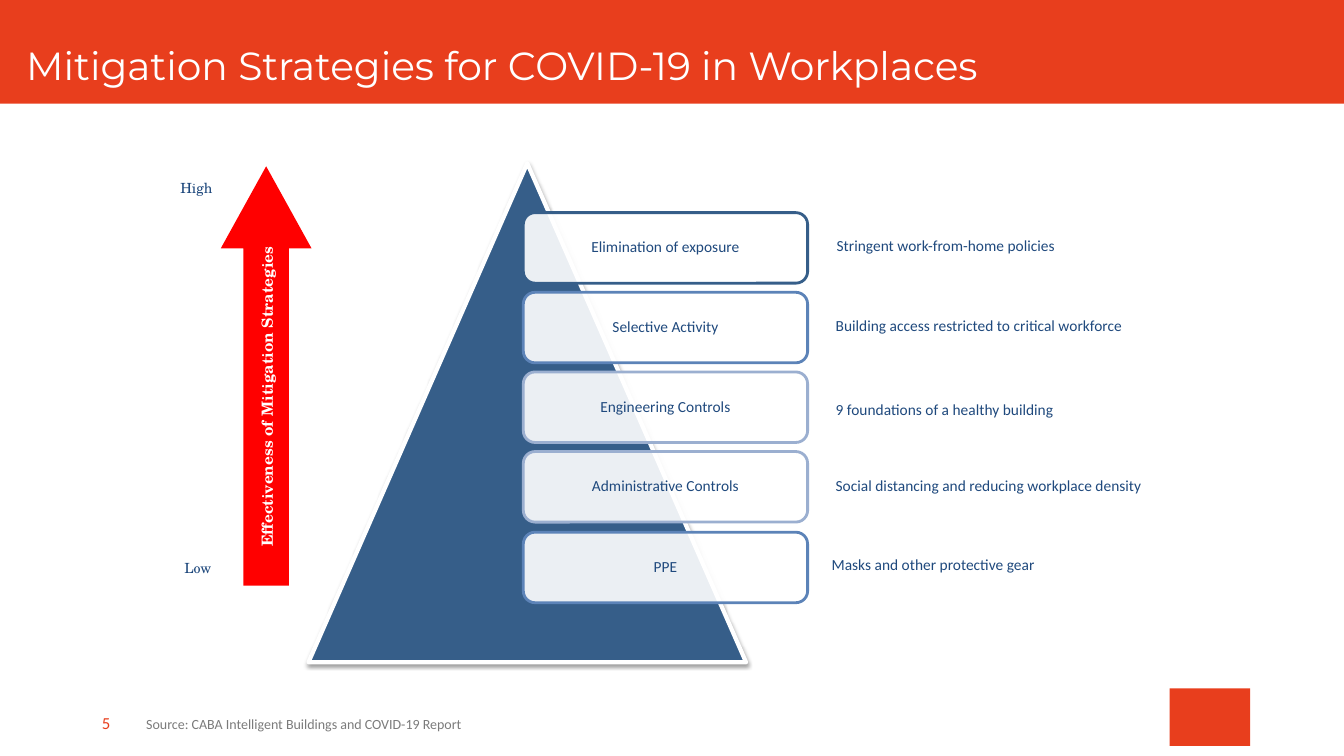
from dataclasses import dataclass
from typing import NamedTuple

from lxml import etree
from pptx import Presentation
from pptx import util as u
from pptx.dml import color
from pptx.enum import shapes, text
from pptx.oxml import ns

EMU_PER_PX = 9144


@dataclass(frozen=True)
class Theme:
    accent: str = "E83E1D"
    navy: str = "365E89"
    blue: str = "5C83B8"
    pale: str = "9BAFD0"
    ink: str = "1F497D"
    grey: str = "7B7B7B"
    red: str = "FF0000"
    white: str = "FFFFFF"
    title_font: str = "Montserrat"
    body_font: str = "Calibri"
    scale_font: str = "TeX Gyre Schola"
    title_size: int = 28
    number_size: int = 12
    body_size: int = 11
    small_size: int = 10


THEME = Theme()


class Frame(NamedTuple):
    left: int
    top: int
    width: int
    height: int


class Strategy(NamedTuple):
    name: str
    outline: str
    measure: str
    measure_left: int
    measure_top: int


class Label(NamedTuple):
    words: str
    frame: Frame
    style: dict


STRATEGIES = [
    Strategy("Elimination of exposure", THEME.navy, "Stringent work-from-home policies", 820, 229),
    Strategy("Selective Activity", THEME.blue, "Building access restricted to critical workforce", 819, 309),
    Strategy("Engineering Controls", THEME.pale, "9 foundations of a healthy building", 819, 392),
    Strategy("Administrative Controls", THEME.pale, "Social distancing and reducing workplace density", 819, 467),
    Strategy("PPE", THEME.blue, "Masks and other protective gear", 815, 546),
]

SCALE_STYLE = dict(font=THEME.scale_font, size=THEME.small_size, spacing=1.6,
                   align=text.PP_ALIGN.JUSTIFY, anchor=text.MSO_ANCHOR.MIDDLE)
LABELS = [
    Label("5", Frame(97, 706, 25, 19),
          dict(size=THEME.number_size, ink=THEME.accent, insets=(4, 0, 0, 0), spacing=1.03)),
    Label("Source: CABA Intelligent Buildings and COVID-19 Report", Frame(144, 709, 375, 19),
          dict(size=THEME.small_size, ink=THEME.grey, insets=(1, 0, 0, 0), spacing=1.04)),
    Label("Low", Frame(173, 539, 59, 39), SCALE_STYLE),
    Label("High", Frame(169, 162, 65, 39), SCALE_STYLE),
]


def px(length: float) -> u.Emu:
    return u.Emu(round(length * EMU_PER_PX))


def rgb(code: str) -> color.RGBColor:
    return color.RGBColor.from_string(code)


def place(frame: Frame) -> tuple:
    return tuple(px(length) for length in frame)


def write(box, words: str, *, font: str = THEME.body_font, size: int = THEME.body_size,
          ink: str = THEME.ink, bold: bool = False, align=text.PP_ALIGN.LEFT,
          anchor=text.MSO_ANCHOR.TOP, insets: tuple = (10, 5, 10, 5),
          spacing: float = 1.0) -> None:
    frame = box.text_frame
    frame.word_wrap = True
    frame.auto_size = text.MSO_AUTO_SIZE.NONE
    frame.vertical_anchor = anchor
    frame.margin_left, frame.margin_top, frame.margin_right, frame.margin_bottom = map(px, insets)
    para = frame.paragraphs[0]
    para.alignment = align
    para.line_spacing = spacing
    span = para.add_run()
    span.text = words
    span.font.name = font
    span.font.size = u.Pt(size)
    span.font.bold = bold
    span.font.color.rgb = rgb(ink)


def add_label(page, words: str, frame: Frame, **style):
    box = page.shapes.add_textbox(*place(frame))
    write(box, words, **style)
    return box


def add_block(page, preset, frame: Frame, fill: str, *, outline: str = "", weight: int = 0):
    block = page.shapes.add_shape(preset, *place(frame))
    block.shadow.inherit = False
    block.fill.solid()
    block.fill.fore_color.rgb = rgb(fill)
    if outline:
        block.line.color.rgb = rgb(outline)
        block.line.width = u.Pt(weight)
    else:
        block.line.fill.background()
    return block


def set_opacity(block, percent: int) -> None:
    fill_color = block.element.spPr.find(ns.qn("a:solidFill"))[0]
    etree.SubElement(fill_color, ns.qn("a:alpha"), val=str(percent * 1000))


def add_drop_shadow(block) -> None:
    effects = block.element.spPr.find(ns.qn("a:effectLst"))
    shadow = etree.SubElement(effects, ns.qn("a:outerShdw"), blurRad=str(u.Pt(3.1)),
                              dist=str(u.Pt(1.6)), dir="5400000", rotWithShape="0")
    shade = etree.SubElement(shadow, ns.qn("a:srgbClr"), val="000000")
    etree.SubElement(shade, ns.qn("a:alpha"), val="38000")


def add_header(page) -> None:
    title = page.shapes.title
    title.left, title.top, title.width, title.height = place(Frame(25, 40, 1150, 49))
    write(title, "Mitigation Strategies for COVID-19 in Workplaces", font=THEME.title_font,
          size=THEME.title_size, ink=THEME.white, insets=(1, 1, 0, 0))
    banner = add_block(page, shapes.MSO_SHAPE.RECTANGLE, Frame(0, 0, 1333, 103), THEME.accent)
    title.element.addprevious(banner.element)


def add_pyramid(page) -> None:
    pyramid = add_block(page, shapes.MSO_SHAPE.ISOSCELES_TRIANGLE, Frame(306, 162, 434, 495),
                        THEME.navy, outline=THEME.white, weight=3)
    add_drop_shadow(pyramid)
    for row, strategy in enumerate(STRATEGIES):
        card = add_block(page, shapes.MSO_SHAPE.ROUNDED_RECTANGLE,
                         Frame(519, 211 + row * 317 // 4, 282, 70), THEME.white,
                         outline=strategy.outline, weight=2)
        set_opacity(card, 90)
        write(card, strategy.name, align=text.PP_ALIGN.CENTER, anchor=text.MSO_ANCHOR.MIDDLE,
              insets=(5, 5, 5, 5), spacing=0.9)
        add_label(page, strategy.measure,
                  Frame(strategy.measure_left, strategy.measure_top, 417, 34))


def add_effectiveness_arrow(page) -> None:
    arrow = add_block(page, shapes.MSO_SHAPE.UP_ARROW, Frame(219, 165, 90, 416), THEME.red)
    arrow.adjustments[0] = 0.5
    arrow.adjustments[1] = 0.905
    caption = add_label(page, "Effectiveness of Mitigation Strategies", Frame(77, 371, 375, 45),
                        font=THEME.scale_font, ink=THEME.white, bold=True,
                        align=text.PP_ALIGN.CENTER, anchor=text.MSO_ANCHOR.MIDDLE)
    caption.rotation = 270


def main() -> None:
    deck = Presentation()
    deck.slide_width, deck.slide_height = px(1333), px(750)
    page = deck.slides.add_slide(deck.slide_layouts.get_by_name("Title Only"))
    add_header(page)
    add_block(page, shapes.MSO_SHAPE.RECTANGLE, Frame(1160, 683, 80, 57), THEME.accent)
    add_pyramid(page)
    add_effectiveness_arrow(page)
    for label in LABELS:
        add_label(page, label.words, label.frame, **label.style)
    deck.save("out.pptx")


if __name__ == "__main__":
    main()
